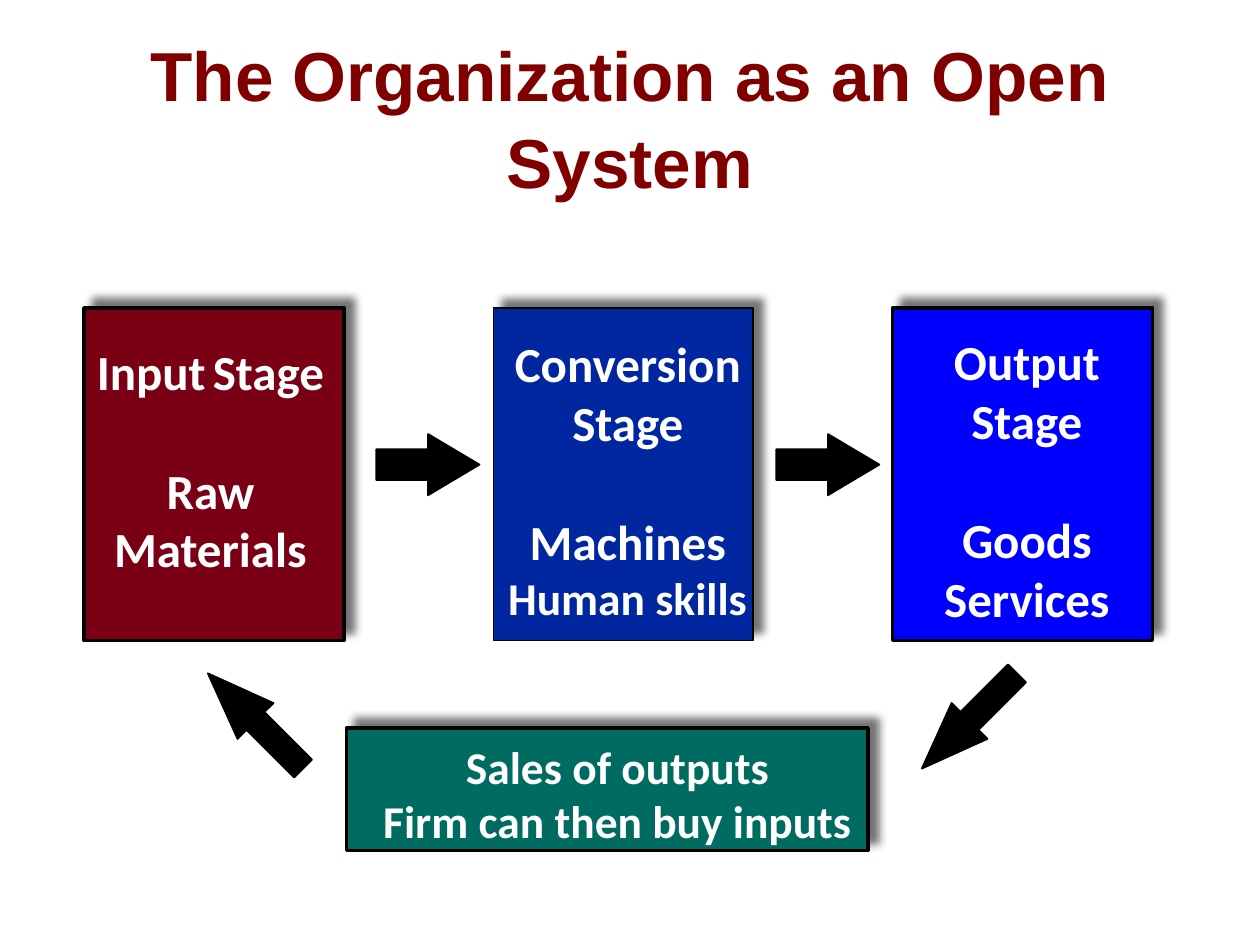
from lxml.etree import SubElement
from pptx import Presentation
from pptx.dml.color import RGBColor
from pptx.enum.shapes import MSO_SHAPE
from pptx.enum.text import MSO_ANCHOR, MSO_AUTO_SIZE, PP_ALIGN
from pptx.oxml.ns import qn
from pptx.util import Pt

WHITE, BLACK = "FFFFFF", "000000"
BLANK_LINE = 34.2  # gap of one 28 pt line


def color(value):
    return RGBColor.from_string(value)


def place(sp, left, top, width, height):
    sp.left, sp.top, sp.width, sp.height = Pt(left), Pt(top), Pt(width), Pt(height)


def add_run(p, text, size=28, font="Calibri", fill=WHITE):
    r = p.add_run()
    r.text = text
    r.font.name, r.font.size, r.font.bold = font, Pt(size), True
    r.font.color.rgb = color(fill)


def add_title(s, text):
    sp = s.shapes.title
    place(sp, 12, 18, 696, 96)
    sp.fill.solid()
    sp.fill.fore_color.rgb = color(WHITE)
    tf = sp.text_frame
    tf.auto_size, tf.word_wrap = MSO_AUTO_SIZE.NONE, True
    tf.vertical_anchor = MSO_ANCHOR.MIDDLE
    p = tf.paragraphs[0]
    p.alignment, p.line_spacing = PP_ALIGN.CENTER, 1.04
    add_run(p, text, size=39.6, font="Arial", fill="800000")


def add_solid(s, kind, box, fill, line=1):
    sp = s.shapes.add_shape(kind, *map(Pt, box))
    sp.shadow.inherit = False
    sp.fill.solid()
    sp.fill.fore_color.rgb = color(fill)
    sp.line.color.rgb = color(BLACK)
    sp.line.width = Pt(line)
    return sp


def add_box(s, box, fill, line=2):
    sp = add_solid(s, MSO_SHAPE.RECTANGLE, box, fill, line)
    # Shadow up and to the right
    effects = sp._element.spPr.find(qn("a:effectLst"))
    shadow = SubElement(effects, qn("a:outerShdw"), blurRad=str(Pt(5)),
                        dist=str(Pt(7.1)), dir=str(315 * 60000),
                        algn="ctr", rotWithShape="0")
    tint = SubElement(shadow, qn("a:srgbClr"), val="474747")
    SubElement(tint, qn("a:alpha"), val="75000")


def add_label(s, box, lines, gap_before=None):
    """Each line is a list of (text, size) runs."""
    tf = s.shapes.add_textbox(*map(Pt, box)).text_frame
    tf.word_wrap, tf.auto_size = False, MSO_AUTO_SIZE.SHAPE_TO_FIT_TEXT
    for i, runs in enumerate(lines):
        p = tf.paragraphs[0] if i == 0 else tf.add_paragraph()
        p.alignment = PP_ALIGN.CENTER
        if i == gap_before:
            p.space_before = Pt(BLANK_LINE)
        for text, size in runs:
            add_run(p, text, size=size)


def add_arrow(s, kind, box, head, rotation=0):
    sp = add_solid(s, kind, box, BLACK)
    sp.adjustments[0], sp.adjustments[1] = 0.5, head
    sp.rotation = rotation


def main():
    prs = Presentation()
    prs.slide_width, prs.slide_height = Pt(720), Pt(540)
    s = prs.slides.add_slide(prs.slide_layouts[5])
    add_title(s, "The Organization as an Open System")

    # Stages: box left, fill, line, label box, lines, line after the gap
    stages = [
        (48, "790015", 2, (44, 191.5, 152.5, 142),
         [[("Input", 28), (" ", 18), ("Stage", 28)], [("Raw", 28)], [("Materials", 28)]], 1),
        (282, "00279F", 1, (278, 187, 161.5, 173),
         [[("Conversion", 28)], [("Stage", 28)], [("Machines", 28)], [("Human skills", 26)]], 2),
        (510, "0000FF", 2, (530.5, 186, 112.5, 175),
         [[("Output", 28)], [("Stage", 28)], [("Goods", 28)], [("Services", 28)]], 2),
    ]
    for left, fill, line, label_box, lines, gap in stages:
        add_box(s, (left, 176, 148.5, 190), fill, line)
        add_label(s, label_box, lines, gap)

    # Arrows between stages
    for left in (215, 443.5):
        add_arrow(s, MSO_SHAPE.RIGHT_ARROW, (left, 248, 59, 35), 0.84)

    # Feedback loop
    add_box(s, (198, 416, 298, 70), "006B61")
    for left, rotation in ((515.5, 315), (107.5, 45)):
        add_arrow(s, MSO_SHAPE.LEFT_ARROW, (left, 397.5, 77, 29), 1.33, rotation)
    add_label(s, (205, 418.5, 296, 70),
              [[("Sales of outputs", 26)], [("Firm can then buy inputs", 26)]])

    prs.save("out.pptx")


if __name__ == "__main__":
    main()
